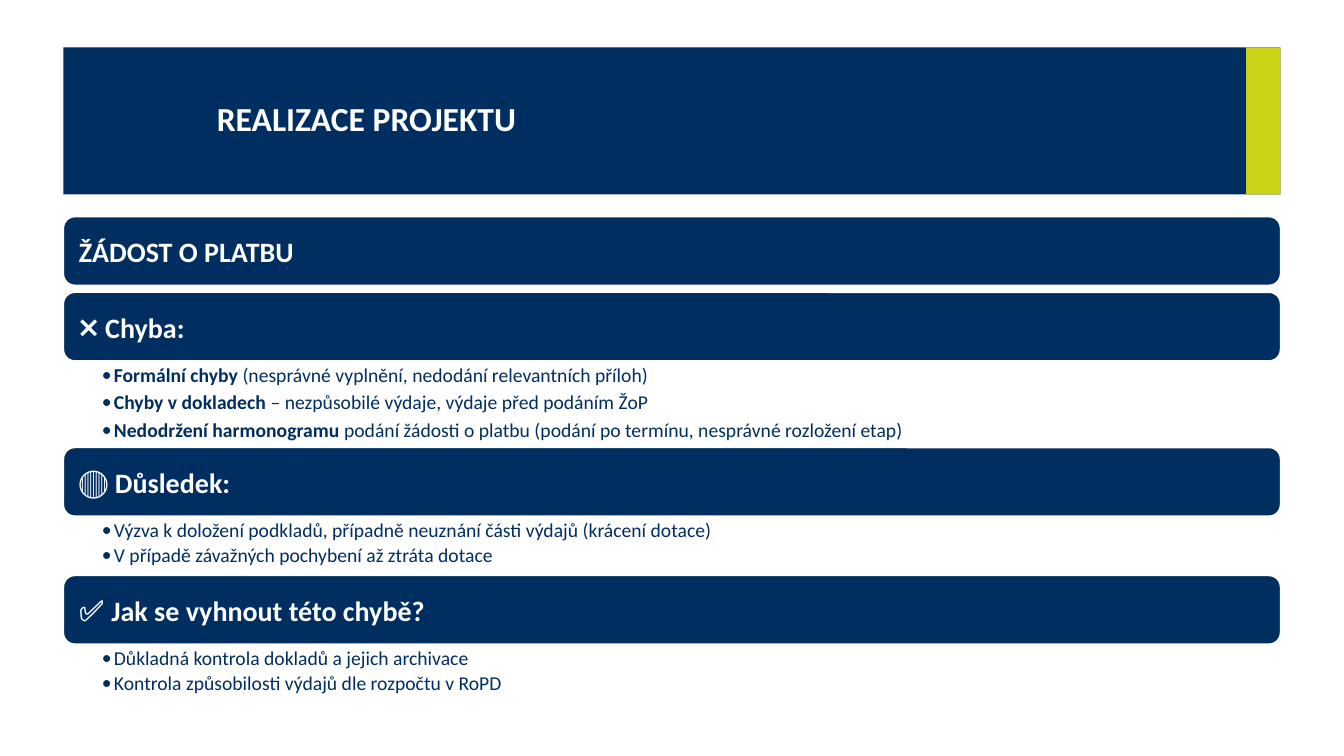
from dataclasses import dataclass

from lxml import etree
from pptx import Presentation
from pptx import util as u
from pptx.dml.color import RGBColor
from pptx.enum import shapes, text
from pptx.oxml.ns import qn


@dataclass(frozen=True)
class Theme:
    navy: RGBColor = RGBColor(0x00, 0x2E, 0x60)
    lime: RGBColor = RGBColor(0xC9, 0xD4, 0x17)
    white: RGBColor = RGBColor(0xFF, 0xFF, 0xFF)
    face: str = "Calibri"
    title: int = 24
    symbol: int = 21
    heading: int = 20
    body: int = 14


THEME = Theme()
LEFT, WIDTH = 63, 1207
BAR_HEIGHT = 68

SECTIONS = [
    ("❌ ", "Chyba:", 86, 1, [
        ("Formální chyby ", "(nesprávné vyplnění, nedodání relevantních příloh)"),
        ("Chyby v dokladech ", "– nezpůsobilé výdaje, výdaje před podáním ŽoP"),
        ("Nedodržení harmonogramu ",
         "podání žádosti o platbu (podání po termínu, nesprávné rozložení etap)"),
    ]),
    ("🔴 ", "Důsledek:", 59, 0.9, [
        ("", "Výzva k doložení podkladů, případně neuznání části výdajů (krácení dotace)"),
        ("", "V případě závažných pochybení až ztráta dotace"),
    ]),
    ("✅ ", "Jak se vyhnout této chybě?", 60, 0.9, [
        ("", "Důkladná kontrola dokladů a jejich archivace"),
        ("", "Kontrola způsobilosti výdajů dle rozpočtu v RoPD"),
    ]),
]


def px(length):
    return u.Emu(length * 9144)


def apply(target, values):
    for name, value in values.items():
        setattr(target, name, value)


def place(part, box):
    apply(part, dict(zip(("left", "top", "width", "height"), map(px, box))))


def set_frame(frame, anchor, insets):
    sides = ("margin_left", "margin_top", "margin_right", "margin_bottom")
    apply(frame, dict(zip(sides, map(px, insets))))
    apply(frame, {"word_wrap": True, "auto_size": text.MSO_AUTO_SIZE.NONE,
                  "vertical_anchor": anchor})


def add_words(paragraph, words, size, color, bold):
    run = paragraph.add_run()
    run.text = words
    apply(run.font, {"name": THEME.face, "size": u.Pt(size), "bold": bold})
    run.font.color.rgb = color


def add_block(slide, kind, box, fill):
    block = slide.shapes.add_shape(kind, *map(px, box))
    block.shadow.inherit = False
    block.fill.solid()
    block.fill.fore_color.rgb = fill
    block.line.fill.background()
    return block


def draw_header(slide, box, words):
    left, top, width, height = box
    stripe = 34
    rectangle = shapes.MSO_SHAPE.RECTANGLE
    add_block(slide, rectangle, box, THEME.navy)
    add_block(slide, rectangle, (left + width - stripe, top, stripe, height), THEME.lime)
    title = slide.shapes.title
    place(title, (left + 152, top, 996, height))
    set_frame(title.text_frame, text.MSO_ANCHOR.MIDDLE, (0, 0, 0, 0))
    paragraph = title.text_frame.paragraphs[0]
    apply(paragraph, {"alignment": text.PP_ALIGN.LEFT, "line_spacing": 0.9})
    add_words(paragraph, words, THEME.title, THEME.white, True)
    title.element.getparent().append(title.element)


def draw_bar(slide, box, symbol, heading):
    bar = add_block(slide, shapes.MSO_SHAPE.ROUNDED_RECTANGLE, box, THEME.navy)
    bar.line.color.rgb = THEME.white
    bar.line.width = u.Pt(1)
    set_frame(bar.text_frame, text.MSO_ANCHOR.MIDDLE, (12, 11, 12, 11))
    paragraph = bar.text_frame.paragraphs[0]
    paragraph.alignment = text.PP_ALIGN.LEFT
    if symbol:
        add_words(paragraph, symbol, THEME.symbol, THEME.white, True)
    add_words(paragraph, heading, THEME.heading, THEME.white, True)


def draw_list(body, box, items, last_spacing):
    place(body, box)
    frame = body.text_frame
    set_frame(frame, text.MSO_ANCHOR.TOP, (38, 2, 11, 2))
    for index, (lead, rest) in enumerate(items):
        paragraph = frame.add_paragraph() if index else frame.paragraphs[0]
        apply(paragraph, {"level": 1, "space_before": u.Pt(0), "space_after": u.Pt(2.8),
                          "alignment": text.PP_ALIGN.LEFT,
                          "line_spacing": last_spacing if index == len(items) - 1 else 1})
        properties = paragraph._p.get_or_add_pPr()
        properties.set("marL", str(px(12)))
        properties.set("indent", str(-px(12)))
        etree.SubElement(properties, qn("a:buFont")).set("typeface", THEME.face)
        etree.SubElement(properties, qn("a:buChar")).set("char", "•")
        if lead:
            add_words(paragraph, lead, THEME.body, THEME.navy, True)
        add_words(paragraph, rest, THEME.body, THEME.navy, False)


def draw_sections(slide, box):
    left, top, width = box
    bodies = [part for part in slide.placeholders if part.placeholder_format.idx > 0]
    for spare in bodies[len(SECTIONS):]:
        spare.element.getparent().remove(spare.element)
    for body, (symbol, heading, height, spacing, items) in zip(bodies, SECTIONS):
        draw_bar(slide, (left, top, width, BAR_HEIGHT), symbol, heading)
        top += BAR_HEIGHT
        draw_list(body, (left, top, width, height), items, spacing)
        top += height


def main():
    deck = Presentation()
    apply(deck, {"slide_width": px(1333), "slide_height": px(750)})
    slide = deck.slides.add_slide(deck.slide_layouts.get_by_name("Comparison"))
    draw_header(slide, (LEFT, 47, WIDTH, 146), "REALIZACE PROJEKTU")
    draw_bar(slide, (LEFT, 215, WIDTH, BAR_HEIGHT), "", "ŽÁDOST O PLATBU")
    draw_sections(slide, (LEFT, 290, WIDTH))
    deck.save("out.pptx")


if __name__ == "__main__":
    main()
